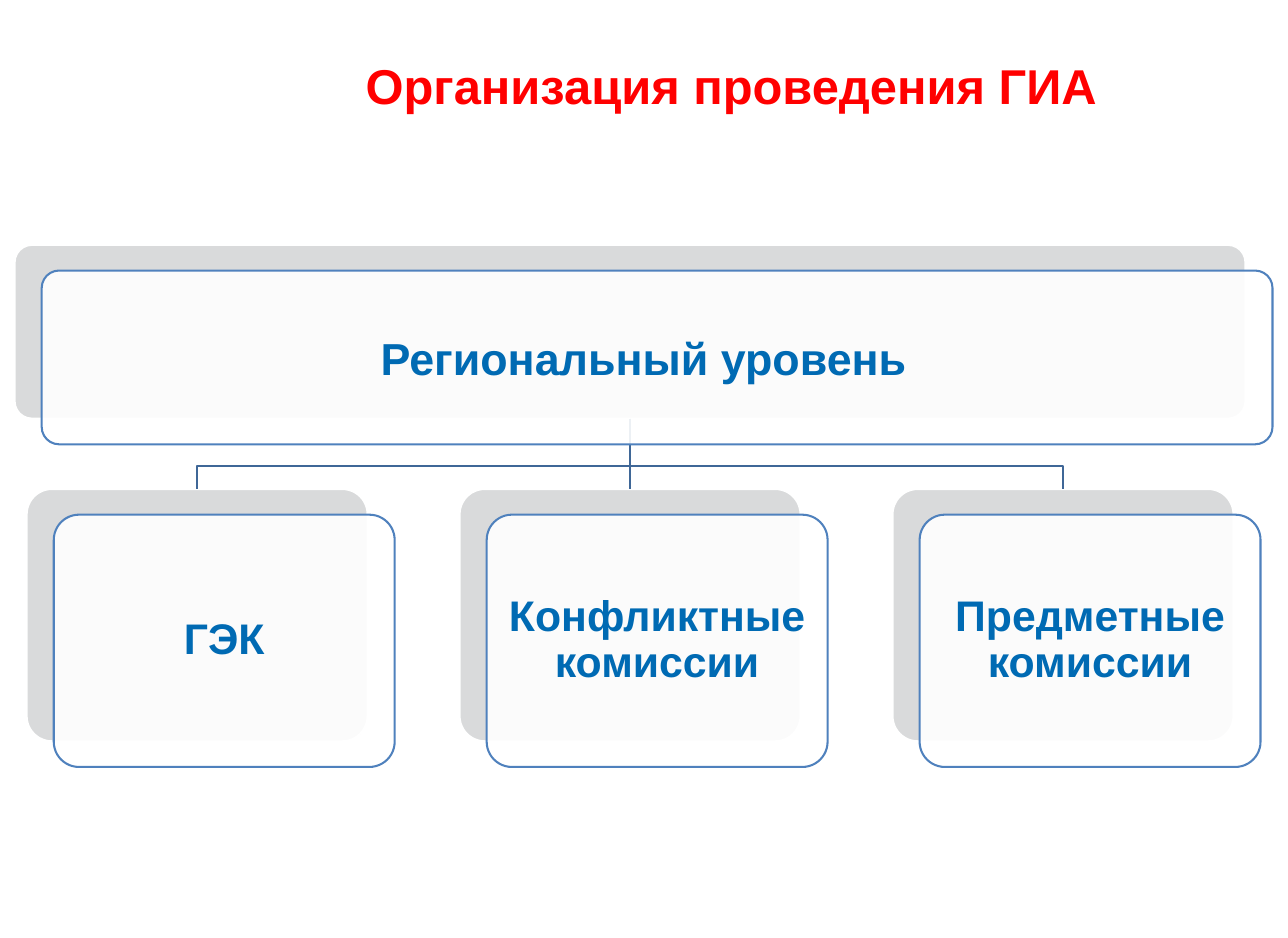
from lxml import etree
from pptx import Presentation
from pptx.dml.color import RGBColor
from pptx.enum.shapes import MSO_CONNECTOR, MSO_SHAPE
from pptx.enum.text import MSO_ANCHOR, PP_ALIGN
from pptx.oxml.ns import qn
from pptx.util import Pt

TITLE = "Организация проведения ГИА"
LEVEL = "Региональный уровень"
COMMISSIONS = ["ГЭК", "Конфликтные комиссии", "Предметные комиссии"]

COLORS = {
    "title": "FF0000",
    "text": "006AB3",
    "back": "D9DADB",
    "front": "FFFFFF",
    "border": "4F81BD",
    "link": "3F6797",
}
FONT = "Arial"
ROUND_RECT, STRAIGHT = MSO_SHAPE.ROUNDED_RECTANGLE, MSO_CONNECTOR.STRAIGHT
CENTER, MIDDLE = PP_ALIGN.CENTER, MSO_ANCHOR.MIDDLE

# Lengths in points
SLIDE_SIZE = 1265, 921
TITLE_BOX = 235.4, 23.8, 966.2, 118.8
LEVEL_BOX = 14.4, 240.5, 1208.8, 170.6
CARD_WIDTH, CARD_HEIGHT, CARD_TOP = 334.8, 247.7, 480.2
CARD_PITCH = 425.2
FRONT_SHIFT = 26.6, 25.2
BEND_Y = 458
LINE_WIDTH = 2


def color(name):
    return RGBColor.from_string(COLORS[name])


def write(shape, text, size, ink="text", insets=(12.2, 12.2, 12.2, 12.2), spacing=1.0):
    """Put centred bold text in a shape; insets are left, top, right, bottom."""
    frame = shape.text_frame
    frame.word_wrap = True
    frame.vertical_anchor = MIDDLE
    (frame.margin_left, frame.margin_top,
     frame.margin_right, frame.margin_bottom) = map(Pt, insets)
    para = frame.paragraphs[0]
    para.alignment = CENTER
    para.line_spacing = spacing
    span = para.add_run()
    span.text = text
    span.font.name = FONT
    span.font.size = Pt(size)
    span.font.bold = True
    span.font.color.rgb = color(ink)


def add_card(page, box, fill, line):
    card = page.shapes.add_shape(ROUND_RECT, *map(Pt, box))
    card.adjustments[0] = 0.1
    card.shadow.inherit = False
    card.fill.solid()
    card.fill.fore_color.rgb = color(fill)
    card.line.color.rgb = color(line)
    card.line.width = Pt(LINE_WIDTH)
    return card


def add_front(page, box):
    """Add the nearly opaque white card, shifted from its grey back card."""
    left, top, width, height = box
    shifted = left + FRONT_SHIFT[0], top + FRONT_SHIFT[1], width, height
    card = add_card(page, shifted, "front", "border")
    rgb = card.fill._xPr.find(qn("a:solidFill")).find(qn("a:srgbClr"))
    etree.SubElement(rgb, qn("a:alpha")).set("val", "90000")
    return card


def add_elbow(page, points):
    start, *rest = [(Pt(x), Pt(y)) for x, y in points]
    builder = page.shapes.build_freeform(*start)
    builder.add_line_segments(rest, close=False)
    elbow = builder.convert_to_shape()
    elbow.shadow.inherit = False
    elbow.fill.background()
    return elbow


def add_straight(page, upper, lower):
    link = page.shapes.add_connector(STRAIGHT, 0, 0, 0, 0)
    link.begin_connect(upper, 2)
    link.end_connect(lower, 0)
    etree.SubElement(link._element.spPr, qn("a:effectLst"))
    return link


def main():
    deck = Presentation()
    deck.slide_width, deck.slide_height = map(Pt, SLIDE_SIZE)
    page = deck.slides.add_slide(deck.slide_layouts[5])

    title = page.shapes.title
    title.left, title.top, title.width, title.height = map(Pt, TITLE_BOX)
    write(title, TITLE, 48, ink="title", insets=(13.7, 6.5, 13.7, 6.5))

    left, top, width, height = LEVEL_BOX
    center, bottom = left + width / 2, top + height
    middle = len(COMMISSIONS) // 2
    card_centers = [center + (i - middle) * CARD_PITCH for i in range(len(COMMISSIONS))]
    card_boxes = [(x - CARD_WIDTH / 2, CARD_TOP, CARD_WIDTH, CARD_HEIGHT)
                  for x in card_centers]

    level_back = add_card(page, LEVEL_BOX, "back", "front")
    card_backs = [add_card(page, box, "back", "front") for box in card_boxes]

    for x, back in zip(card_centers, card_backs):
        if x == center:
            link = add_straight(page, level_back, back)
        else:
            link = add_elbow(page, [(center, bottom), (center, BEND_Y),
                                    (x, BEND_Y), (x, CARD_TOP)])
        link.line.color.rgb = color("link")
        link.line.width = Pt(LINE_WIDTH)

    level_front = add_front(page, LEVEL_BOX)
    write(level_front, LEVEL, 44, insets=(12.2, 7.2, 38.2, 7.2))
    for box, text in zip(card_boxes, COMMISSIONS):
        write(add_front(page, box), text, 42, spacing=0.9)

    deck.save("out.pptx")


if __name__ == "__main__":
    main()
